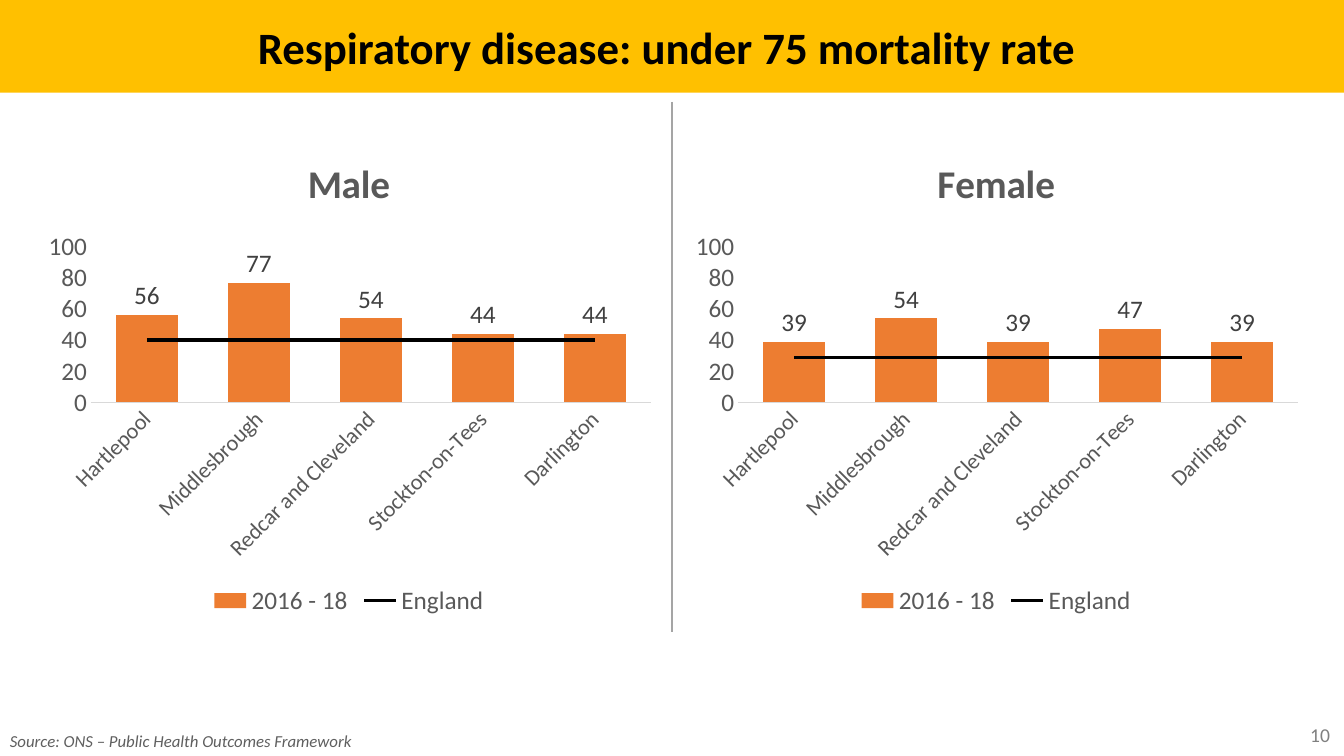
import pptx
import pptx.chart.data
import pptx.dml.color
import pptx.enum.chart
import pptx.enum.shapes
import pptx.enum.text
import pptx.oxml
import pptx.oxml.ns
import pptx.util

WIDTH, HEIGHT = 13.33, 7.5
FONT = "Calibri"
COLOURS = {
    "banner": "FFC000", "title": "000000", "divider": "A5A5A5", "source": "5F5F5F",
    "number": "808080", "bar": "ED7D31", "england": "000000", "axis": "D9D9D9",
    "chart_text": "595959", "value": "404040",
}
HEADING = "Respiratory disease: under 75 mortality rate "
SOURCE = "Source: ONS – Public Health Outcomes Framework"
PAGE_NUMBER = "10"
AREAS = ["Hartlepool", "Middlesbrough", "Redcar and Cleveland", "Stockton-on-Tees", "Darlington"]
PERIOD, NATION = "2016 - 18", "England"
PANELS = [
    {"title": "Male", "left": 0.34, "rates": [56, 77, 54, 44, 44], "england": 40},
    {"title": "Female", "left": 6.76, "rates": [39, 54, 39, 47, 39], "england": 29},
]
PANEL_TOP, PANEL_WIDTH, PANEL_HEIGHT = 1.34, 6.24, 4.82
PLOT_AREA = {"x": 0.09, "y": 0.23, "w": 0.89, "h": 0.32}
BANNER_HEIGHT = 0.92

inch = pptx.util.Inches
namespace = pptx.oxml.ns.nsdecls("c")
Align = pptx.enum.text.PP_ALIGN
Anchor = pptx.enum.text.MSO_ANCHOR
Chart = pptx.enum.chart


def colour(name):
    return pptx.dml.color.RGBColor.from_string(COLOURS[name])


def assign(target, **values):
    for name, value in values.items():
        setattr(target, name, value)


def style(font, size, name, bold=False, italic=False):
    assign(font, size=pptx.util.Pt(size), name=FONT, bold=bold, italic=italic)
    font.color.rgb = colour(name)


def stroke(line, name, width):
    line.color.rgb = colour(name)
    line.width = pptx.util.Pt(width)


def write(box, text, align, anchor, wrap, *look, **accents):
    frame = box.text_frame
    assign(frame, word_wrap=wrap, vertical_anchor=anchor)
    para = frame.paragraphs[0]
    para.alignment = align
    span = para.add_run()
    span.text = text
    style(span.font, *look, **accents)


def fix_plot_area(chart):
    edges = "".join(f'<c:{key} val="{share}"/>' for key, share in PLOT_AREA.items())
    layout = pptx.oxml.parse_xml(
        f'<c:layout {namespace}><c:manualLayout><c:layoutTarget val="inner"/>'
        f'<c:xMode val="edge"/><c:yMode val="edge"/>{edges}</c:manualLayout></c:layout>')
    area = chart.plots[0]._element.getparent()
    for old in area.findall(pptx.oxml.ns.qn("c:layout")):
        area.remove(old)
    area.insert(0, layout)


def turn_into_line(chart):
    bars = chart.plots[0]._element
    series = chart.plots[0].series[1]._element
    for flag in series.findall(pptx.oxml.ns.qn("c:invertIfNegative")):
        series.remove(flag)
    lines = pptx.oxml.parse_xml(
        f'<c:lineChart {namespace}><c:grouping val="standard"/><c:varyColors val="0"/>'
        '<c:marker val="1"/></c:lineChart>')
    lines.insert(2, series)
    for axis in bars.findall(pptx.oxml.ns.qn("c:axId")):
        lines.append(pptx.oxml.parse_xml(f'<c:axId {namespace} val="{axis.get("val")}"/>'))
    bars.addnext(lines)
    england = chart.plots[1].series[0]
    england.smooth = False
    england.marker.style = Chart.XL_MARKER_STYLE.NONE
    stroke(england.format.line, "england", 2.25)


def add_panel(page, panel):
    data = pptx.chart.data.CategoryChartData(number_format="0")
    data.categories = AREAS
    data.add_series(PERIOD, panel["rates"])
    data.add_series(NATION, [panel["england"]] * len(AREAS))
    chart = page.shapes.add_chart(
        Chart.XL_CHART_TYPE.COLUMN_CLUSTERED, inch(panel["left"]), inch(PANEL_TOP),
        inch(PANEL_WIDTH), inch(PANEL_HEIGHT), data).chart
    style(chart.font, 18, "title")

    chart.has_title = True
    heading = chart.chart_title.text_frame.paragraphs[0].add_run()
    heading.text = panel["title"]
    style(heading.font, 28, "chart_text", bold=True)
    chart.has_legend = True
    assign(chart.legend, position=Chart.XL_LEGEND_POSITION.BOTTOM, include_in_layout=False)
    style(chart.legend.font, 18, "chart_text")

    for axis, size in ((chart.category_axis, 16), (chart.value_axis, 18)):
        assign(axis, has_major_gridlines=False, major_tick_mark=Chart.XL_TICK_MARK.NONE,
               minor_tick_mark=Chart.XL_TICK_MARK.NONE)
        style(axis.tick_labels.font, size, "chart_text")
    stroke(chart.category_axis.format.line, "axis", 0.75)
    turned = chart.category_axis._element.find(
        f'{pptx.oxml.ns.qn("c:txPr")}/{pptx.oxml.ns.qn("a:bodyPr")}')
    turned.set("rot", "-2700000")
    turned.set("vert", "horz")
    assign(chart.value_axis, minimum_scale=0, maximum_scale=100, major_unit=20)
    assign(chart.value_axis.tick_labels, number_format="0", number_format_is_linked=False)
    chart.value_axis.format.line.fill.background()

    plot = chart.plots[0]
    assign(plot, gap_width=80, vary_by_categories=False)
    bars = plot.series[0]
    bars.format.fill.solid()
    bars.format.fill.fore_color.rgb = colour("bar")
    labels = bars.data_labels
    assign(labels, show_value=True, number_format="0", number_format_is_linked=False,
           position=Chart.XL_LABEL_POSITION.OUTSIDE_END)
    style(labels.font, 18, "value")
    turn_into_line(chart)
    fix_plot_area(chart)


def main():
    deck = pptx.Presentation()
    assign(deck, slide_width=inch(WIDTH), slide_height=inch(HEIGHT))
    page = deck.slides.add_slide(deck.slide_layouts[6])

    number = page.shapes.add_textbox(inch(10.29), inch(7.09), inch(3), inch(0.4))
    write(number, PAGE_NUMBER, Align.RIGHT, Anchor.MIDDLE, True, 14, "number")

    banner = page.shapes.add_shape(
        pptx.enum.shapes.MSO_SHAPE.RECTANGLE, 0, 0, inch(WIDTH), inch(BANNER_HEIGHT))
    banner.shadow.inherit = False
    banner.fill.solid()
    banner.fill.fore_color.rgb = colour("banner")
    banner.line.fill.background()
    write(banner, HEADING, Align.CENTER, Anchor.MIDDLE, True, 32, "title", bold=True)

    middle = inch(WIDTH / 2)
    divider = page.shapes.add_connector(
        pptx.enum.shapes.MSO_CONNECTOR.STRAIGHT, middle, inch(1.01), middle, inch(6.27))
    stroke(divider.line, "divider", 2)
    divider._element.spPr.append(
        pptx.oxml.parse_xml(f'<a:effectLst {pptx.oxml.ns.nsdecls("a")}/>'))

    source = page.shapes.add_textbox(0, inch(7.2), inch(3.63), inch(0.3))
    write(source, SOURCE, Align.LEFT, Anchor.TOP, False, 12, "source", italic=True)

    for panel in PANELS:
        add_panel(page, panel)
    deck.save("out.pptx")


if __name__ == "__main__":
    main()
